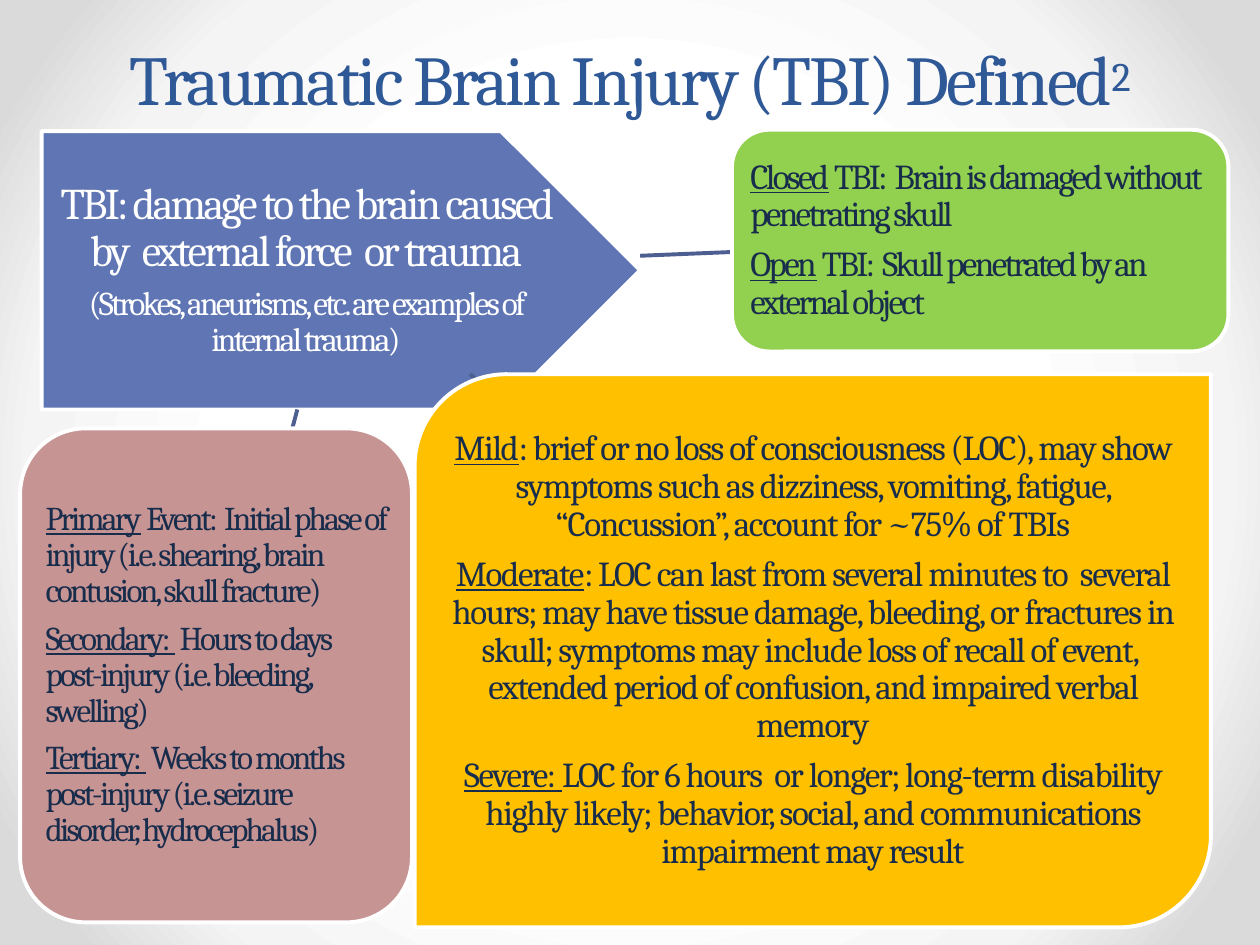
from lxml.etree import SubElement
from pptx import Presentation
from pptx.dml.color import RGBColor
from pptx.enum.shapes import MSO_CONNECTOR, MSO_SHAPE
from pptx.enum.text import MSO_ANCHOR, PP_ALIGN
from pptx.oxml import parse_xml
from pptx.oxml.ns import nsdecls, qn
from pptx.util import Inches, Pt

FONT = "Cambria"
COLORS = {
    "title": "2F5897", "ink": "182C4B", "white": "FFFFFF", "line": "4D5E90",
    "blue": "6076B4", "green": "92D050", "gold": "FFC000", "rose": "C79494",
}
BACKGROUND_STOPS = [(50, "FFFFFF"), (76, "F4F4F4"), (92, "DADADA")]

TITLE = ("Traumatic Brain Injury (TBI) Defined", "2")
CONNECTORS = [  # x1, y1, x2, y2
    (5.08, 2.03, 5.81, 2.0),
    (4.08, 3.25, 3.73, 2.97),
    (2.36, 3.25, 2.32, 3.4),
]
# Each paragraph is (underlined lead, rest, size)
BOXES = [
    dict(kind=MSO_SHAPE.PENTAGON, at=(0.33, 1.04, 4.75, 2.21), fill="blue",
         ink="white", align=PP_ALIGN.CENTER, inset=0.07, tracking=-1.5, after=6,
         paragraphs=[
             ("", "TBI: damage to the brain caused by  external force  or trauma", 25),
             ("", "(Strokes, aneurisms, etc. are examples of internal trauma)", 19),
         ]),
    dict(kind=MSO_SHAPE.ROUNDED_RECTANGLE, at=(5.81, 1.03, 3.94, 1.76), fill="green",
         ink="ink", align=PP_ALIGN.LEFT, inset=0.06, tracking=-1.5, after=7,
         paragraphs=[
             ("Closed", " TBI:  Brain is damaged without penetrating skull", 20),
             ("Open", " TBI:  Skull penetrated by an external object", 20),
         ]),
    dict(kind=MSO_SHAPE.ROUND_2_DIAG_RECTANGLE, at=(3.29, 2.97, 6.32, 4.39), fill="gold",
         ink="ink", align=PP_ALIGN.CENTER, inset=0.06, tracking=-0.8, after=7,
         paragraphs=[
             ("Mild", ": brief or no loss of consciousness (LOC), may show symptoms "
              "such as dizziness, vomiting, fatigue, “Concussion”, account for "
              "~75% of TBIs", 20),
             ("Moderate", ": LOC can last from several minutes to  several hours; may "
              "have tissue damage, bleeding, or fractures in skull; symptoms may "
              "include loss of recall of event,  extended period of confusion, and "
              "impaired verbal memory", 20),
             ("Severe: ", "LOC for 6 hours  or longer; long-term disability highly "
              "likely; behavior, social, and communications impairment may result", 20),
         ]),
    dict(kind=MSO_SHAPE.ROUNDED_RECTANGLE, at=(0.16, 3.4, 3.11, 3.92), fill="rose",
         ink="ink", align=PP_ALIGN.LEFT, inset=0.05, tracking=-1.5, after=6.65,
         paragraphs=[
             ("Primary", " Event:  Initial phase of injury (i.e. shearing, brain "
              "contusion, skull fracture)", 19),
             ("Secondary: ", " Hours to days post-injury (i.e. bleeding, swelling)", 19),
             ("Tertiary: ", " Weeks to months post-injury (i.e. seizure disorder, "
              "hydrocephalus)", 19),
         ]),
]


def rgb(name):
    return RGBColor.from_string(COLORS[name])


def add_run(paragraph, text, size, color, tracking):
    run = paragraph.add_run()
    run.text = text
    run.font.name = FONT
    run.font.size = Pt(size)
    run.font.color.rgb = rgb(color)
    run.font._element.set("spc", str(round(tracking * 100)))
    return run


def set_background(slide):
    """Fill the slide with a gradient spreading from its centre."""
    stops = "".join(
        f'<a:gs pos="{position * 1000}"><a:srgbClr val="{color}"/></a:gs>'
        for position, color in BACKGROUND_STOPS)
    slide.element.cSld.insert(0, parse_xml(
        f'<p:bg {nsdecls("p", "a")}><p:bgPr><a:gradFill rotWithShape="1">'
        f'<a:gsLst>{stops}</a:gsLst><a:path path="circle">'
        '<a:fillToRect l="50000" t="50000" r="50000" b="50000"/></a:path>'
        '</a:gradFill><a:effectLst/></p:bgPr></p:bg>'))


def add_title(slide):
    shape = slide.shapes.add_textbox(*map(Inches, (0.5, 0.17, 9, 0.83)))
    frame = shape.text_frame
    frame.word_wrap = True
    frame.vertical_anchor = MSO_ANCHOR.BOTTOM
    paragraph = frame.paragraphs[0]
    paragraph.alignment = PP_ALIGN.CENTER
    paragraph.line_spacing = Pt(58)
    heading, note = (add_run(paragraph, text, 40, "title", -1.5) for text in TITLE)
    note.font._element.set("baseline", "20000")


def add_connector(slide, ends):
    connector = slide.shapes.add_connector(MSO_CONNECTOR.STRAIGHT, *map(Inches, ends))
    connector.line.color.rgb = rgb("line")
    connector.line.width = Pt(2.25)
    SubElement(connector.element.spPr, qn("a:effectLst"))


def add_box(slide, box):
    shape = slide.shapes.add_shape(box["kind"], *map(Inches, box["at"]))
    shape.shadow.inherit = False
    shape.fill.solid()
    shape.fill.fore_color.rgb = rgb(box["fill"])
    shape.line.color.rgb = rgb("white")
    shape.line.width = Pt(2.25)

    frame = shape.text_frame
    frame.word_wrap = True
    frame.vertical_anchor = MSO_ANCHOR.MIDDLE
    frame.margin_left = frame.margin_right = Inches(box["inset"])
    frame.margin_top = frame.margin_bottom = Inches(box["inset"])
    for index, (lead, rest, size) in enumerate(box["paragraphs"]):
        paragraph = frame.add_paragraph() if index else frame.paragraphs[0]
        paragraph.alignment = box["align"]
        paragraph.line_spacing = 0.9
        paragraph.space_after = Pt(box["after"])
        if lead:
            add_run(paragraph, lead, size, box["ink"], box["tracking"]).font.underline = True
        add_run(paragraph, rest, size, box["ink"], box["tracking"])


def main():
    presentation = Presentation()
    presentation.slide_width, presentation.slide_height = Inches(10), Inches(7.5)
    slide = presentation.slides.add_slide(presentation.slide_layouts[6])
    set_background(slide)
    add_title(slide)
    hub, *branches = BOXES
    add_box(slide, hub)
    for ends, branch in zip(CONNECTORS, branches):
        add_connector(slide, ends)
        add_box(slide, branch)
    presentation.save("out.pptx")


if __name__ == "__main__":
    main()
